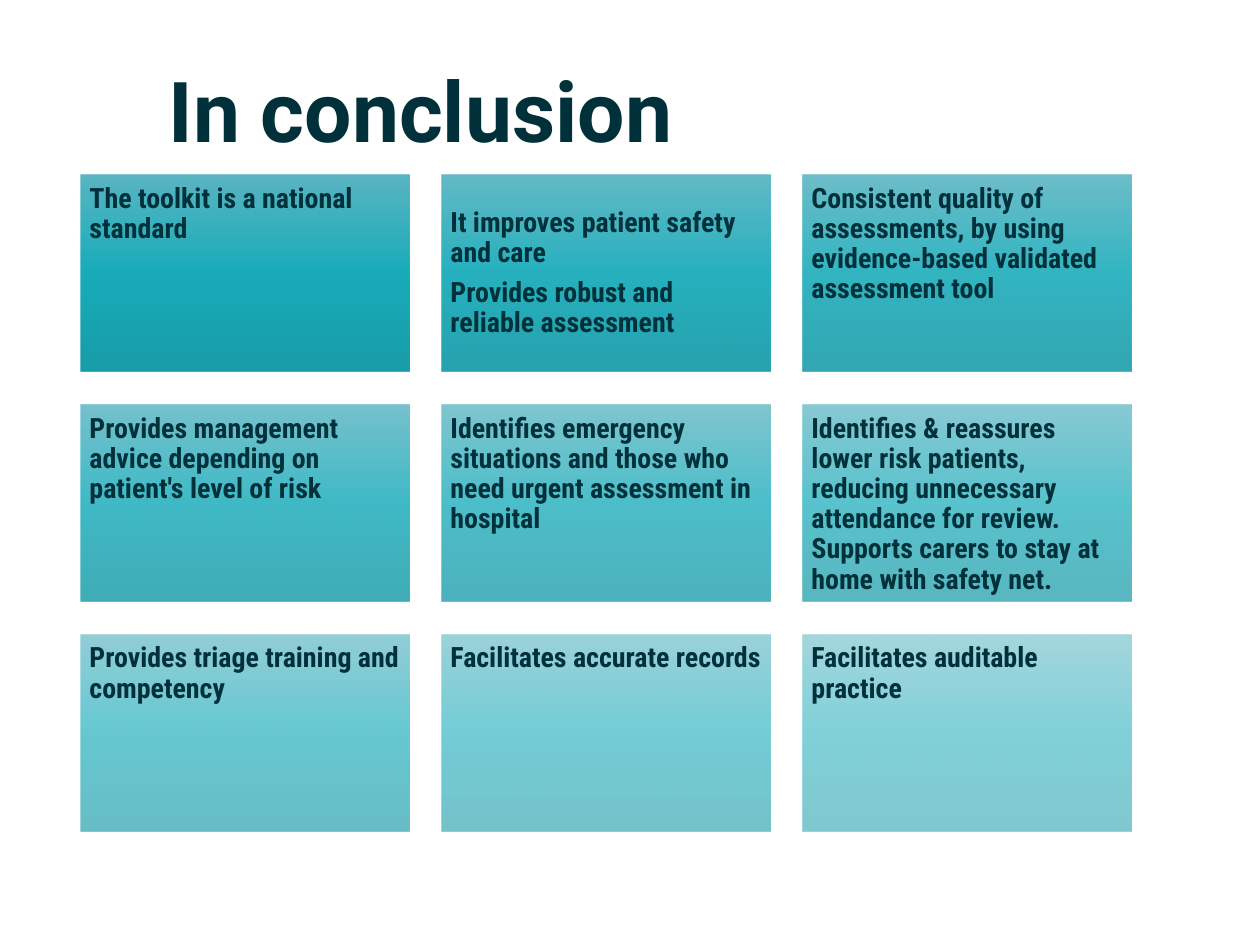
from lxml.etree import SubElement
from pptx import Presentation
from pptx.dml.color import RGBColor
from pptx.enum.shapes import MSO_SHAPE
from pptx.enum.text import MSO_ANCHOR, PP_ALIGN
from pptx.oxml.ns import qn
from pptx.util import Inches, Pt

COLORS = {
    "page": "FFFFFF",
    "text": "00313B",
    "card_top": "4BAEBD",
    "card_middle": "00A4B4",
    "card_bottom": "0092A0",
}
CONCLUSIONS = [
    ["The toolkit is a national standard"],
    ["It improves patient safety and care", "Provides robust and reliable assessment"],
    ["Consistent quality of assessments, by using evidence-based validated assessment tool"],
    ["Provides management advice depending on patient's level of risk"],
    ["Identifies emergency situations and those who need urgent assessment in hospital"],
    ["Identifies & reassures lower risk patients, reducing unnecessary attendance for review. "
     "Supports carers to stay at home with safety net."],
    ["Provides triage training and competency"],
    ["Facilitates accurate records"],
    ["Facilitates auditable practice"],
]
COLUMNS = 3
CARD_WIDTH, CARD_HEIGHT = Inches(2.61), Inches(1.56)


def write_text(frame, paragraphs, *, font, size, anchor=MSO_ANCHOR.TOP, space_after=None):
    frame.word_wrap = True
    frame.vertical_anchor = anchor
    for index, text in enumerate(paragraphs):
        para = frame.paragraphs[0] if index == 0 else frame.add_paragraph()
        para.alignment = PP_ALIGN.LEFT
        para.line_spacing = 0.9
        para.space_after = space_after
        span = para.add_run()
        span.text = text
        span.font.name = font
        span.font.size = Pt(size)
        span.font.bold = True
        span.font.color.rgb = RGBColor.from_string(COLORS["text"])


def fill_card(card, opacity):
    """Shade the card from top to bottom, with the opacity in percent."""
    card.fill.gradient()
    card.fill.gradient_angle = 270
    stops = card._element.spPr.find(f".//{qn('a:gsLst')}")
    for stop in list(stops):
        stops.remove(stop)
    for position, name in ((0, "card_top"), (50, "card_middle"), (100, "card_bottom")):
        stop = SubElement(stops, qn("a:gs"), pos=str(position * 1000))
        color = SubElement(stop, qn("a:srgbClr"), val=COLORS[name])
        SubElement(color, qn("a:alpha"), val=str(opacity * 1000))


def add_title(page, text, left, top, width, height):
    box = page.shapes.add_textbox(left, top, width, height)
    write_text(box.text_frame, [text], font="Roboto", size=48, anchor=MSO_ANCHOR.MIDDLE)


def add_card(page, paragraphs, opacity, left, top, width, height):
    card = page.shapes.add_shape(MSO_SHAPE.RECTANGLE, left, top, width, height)
    card.shadow.inherit = False
    card.line.fill.background()
    fill_card(card, opacity)
    frame = card.text_frame
    frame.margin_left = frame.margin_right = Inches(0.07)
    frame.margin_top = frame.margin_bottom = Inches(0.07)
    anchor = MSO_ANCHOR.MIDDLE if len(paragraphs) > 1 else MSO_ANCHOR.TOP
    write_text(frame, paragraphs, font="Roboto Condensed", size=16,
               anchor=anchor, space_after=Pt(5.6))


def add_card_grid(page, conclusions, left, top, width, height):
    """Spread the cards evenly over the box, each fainter than the one before."""
    rows = len(conclusions) // COLUMNS
    step_x = (width - CARD_WIDTH) // (COLUMNS - 1)
    step_y = (height - CARD_HEIGHT) // (rows - 1)
    for index, paragraphs in enumerate(conclusions):
        row, column = divmod(index, COLUMNS)
        add_card(page, paragraphs, 90 - 5 * index,
                 left + column * step_x, top + row * step_y, CARD_WIDTH, CARD_HEIGHT)


def main():
    deck = Presentation()
    deck.slide_width, deck.slide_height = Inches(10), Inches(7.5)
    page = deck.slides.add_slide(deck.slide_layouts[6])
    page.background.fill.solid()
    page.background.fill.fore_color.rgb = RGBColor.from_string(COLORS["page"])
    add_title(page, "In conclusion", Inches(1.24), Inches(0.43), Inches(6.33), Inches(0.97))
    add_card_grid(page, CONCLUSIONS, Inches(0.64), Inches(1.39), Inches(8.34), Inches(5.21))
    deck.save("out.pptx")


if __name__ == "__main__":
    main()
